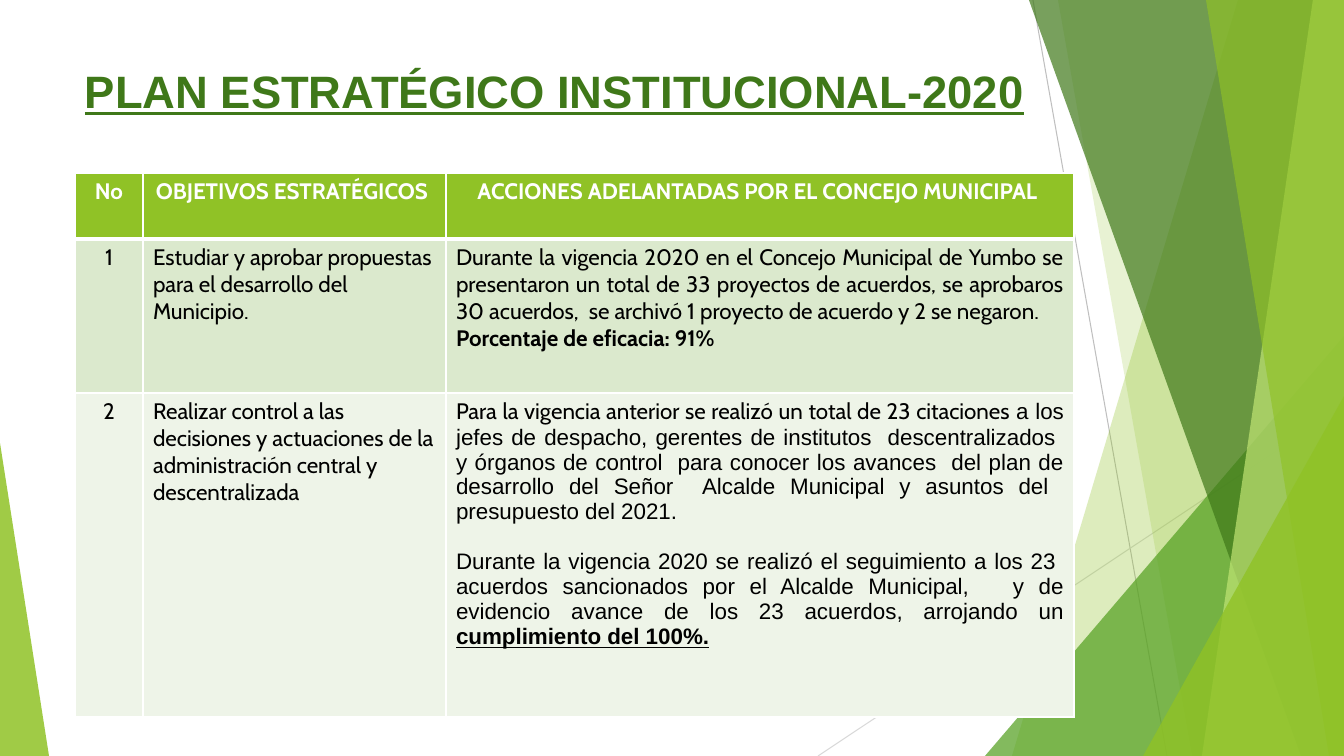
from lxml.etree import SubElement
from pptx import Presentation
from pptx.dml.color import RGBColor
from pptx.enum.shapes import MSO_CONNECTOR, MSO_SHAPE
from pptx.enum.text import MSO_ANCHOR, PP_ALIGN
from pptx.oxml.ns import qn
from pptx.util import Pt

PX = 12192000 / 1344
W, H = 1344, 756
COLORS = {
    "lime": "90C226", "green": "54A021", "forest": "3F7819", "pale": "C0E474",
    "gray": "BFBFBF", "light_gray": "D9D9D9", "white": "FFFFFF", "black": "000000",
    "row_dark": "DBE9CD", "row_light": "EEF4E8",
}


def px(*lengths):
    return [round(n * PX) for n in lengths]


def write(p, text, size=16, font="Cabin", color="black", bold=False, underline=False):
    r = p.add_run()
    r.text = text
    r.font.size = Pt(size)
    r.font.name = font
    r.font.bold = bold
    r.font.underline = underline
    r.font.color.rgb = RGBColor.from_string(COLORS[color])


prs = Presentation()
prs.slide_width, prs.slide_height = px(W, H)
s = prs.slides.add_slide(prs.slide_layouts[6])

# Thin background lines
for x1, y1, x2, y2, color in [
    (1033, 0, 1167, H, "gray"),
    (W, 406, 818, H, "light_gray"),
]:
    line = s.shapes.add_connector(MSO_CONNECTOR.STRAIGHT, *px(x1, y1, x2, y2))
    line.line.color.rgb = RGBColor.from_string(COLORS[color])
    line.line.width = Pt(0.75)
    SubElement(line._element.spPr, qn("a:effectLst"))

# Translucent facets: (top x, bottom x) reach the right edge,
# triangles are (left, top, width, height, apex)
for geometry, color, opacity in [
    ((1238, 1012), "lime", 30),
    ((1058, 1192), "lime", 20),
    ((985, 336, 359, 420, 1), "green", 72),
    ((1029, 1301), "forest", 70),
    ((1313, 1202), "pale", 70),
    ((1206, 1329), "lime", 65),
    ((1143, 396, 201, 360, 1), "lime", 80),
    ((0, 443, 49, 313, 0), "lime", 85),
]:
    if len(geometry) == 2:
        top_x, bottom_x = geometry
        fb = s.shapes.build_freeform(top_x, 0, scale=PX)
        fb.add_line_segments([(W, 0), (W, H), (bottom_x, H)], close=True)
        sp = fb.convert_to_shape()
    else:
        sp = s.shapes.add_shape(MSO_SHAPE.ISOSCELES_TRIANGLE, *px(*geometry[:4]))
        sp.adjustments[0] = geometry[4]
    sp.shadow.inherit = False
    sp.line.fill.background()
    sp.fill.solid()
    sp.fill.fore_color.rgb = RGBColor.from_string(COLORS[color])
    rgb = sp._element.spPr.find(qn("a:solidFill")).find(qn("a:srgbClr"))
    SubElement(rgb, qn("a:alpha"), val=str(opacity * 1000))

# Title
tf = s.shapes.add_textbox(*px(75, 54, 999, 80)).text_frame
tf.word_wrap = True
tf.vertical_anchor = MSO_ANCHOR.MIDDLE
p = tf.paragraphs[0]
p.line_spacing = 0.9
write(p, "PLAN ESTRATÉGICO INSTITUCIONAL-2020", size=32.4, font="Arial",
      color="forest", bold=True, underline=True)

# Table content: each cell is a list of paragraphs, each paragraph a list of runs
head = {"color": "white", "bold": True}
arial = {"font": "Arial"}
rows = [
    [
        [[("No", head)]],
        [[("OBJETIVOS ESTRATÉGICOS ", head)]],
        [[("ACCIONES ADELANTADAS POR EL CONCEJO MUNICIPAL ", head)]],
    ],
    [
        [[("1", {})]],
        [[("Estudiar y aprobar propuestas para el desarrollo del Municipio.", {})]],
        [
            [("Durante la vigencia 2020 en el Concejo Municipal de Yumbo se presentaron "
              "un total de 33 proyectos de acuerdos, se aprobaros 30 acuerdos,  se archivó "
              "1 proyecto de acuerdo y 2 se negaron.", {})],
            [("Porcentaje de eficacia: 91%", {"bold": True})],
        ],
    ],
    [
        [[("2", {})]],
        [[("Realizar control a las decisiones y actuaciones de la administración "
           "central y descentralizada", {})]],
        [
            [("Para la vigencia anterior se realizó un total de 23 citaciones ", {}),
             ("a los jefes de despacho, gerentes de institutos  descentralizados  y "
              "órganos de control  para conocer los avances  del plan de desarrollo del "
              "Señor  Alcalde Municipal y asuntos del  presupuesto del 2021. ", arial)],
            [("Durante la vigencia 2020 se realizó el seguimiento a los 23  acuerdos "
              "sancionados por el Alcalde Municipal,   y de evidencio avance de los 23 "
              "acuerdos, arrojando un ", arial),
             ("cumplimiento del 100%.", {**arial, "bold": True, "underline": True})],
        ],
    ],
]
col_widths = px(68, 303, 628)
row_heights = px(66, 154, 324)
row_fills = ["lime", "row_dark", "row_light"]
aligns = [PP_ALIGN.CENTER, PP_ALIGN.LEFT, PP_ALIGN.JUSTIFY]

# Table
table = s.shapes.add_table(3, 3, *px(75, 173, 999, 544)).table
for column, width in zip(table.columns, col_widths):
    column.width = width
for i, row in enumerate(rows):
    table.rows[i].height = row_heights[i]
    for j, paragraphs in enumerate(row):
        cell = table.cell(i, j)
        tcPr = cell._tc.get_or_add_tcPr()
        for side in ("lnL", "lnR", "lnT", "lnB"):
            thick = (i, side) in [(0, "lnB"), (1, "lnT")]
            ln = SubElement(tcPr, qn(f"a:{side}"), w=str(Pt(3 if thick else 1)))
            SubElement(SubElement(ln, qn("a:solidFill")), qn("a:srgbClr"), val=COLORS["white"])
        cell.fill.solid()
        cell.fill.fore_color.rgb = RGBColor.from_string(COLORS[row_fills[i]])
        tf = cell.text_frame
        for k, runs in enumerate(paragraphs):
            p = tf.add_paragraph() if k else tf.paragraphs[0]
            p.alignment = PP_ALIGN.CENTER if i == 0 else aligns[j]
            if k and i == 2:
                p.space_before = Pt(18)
            for text, style in runs:
                write(p, text, **style)

prs.save("out.pptx")
